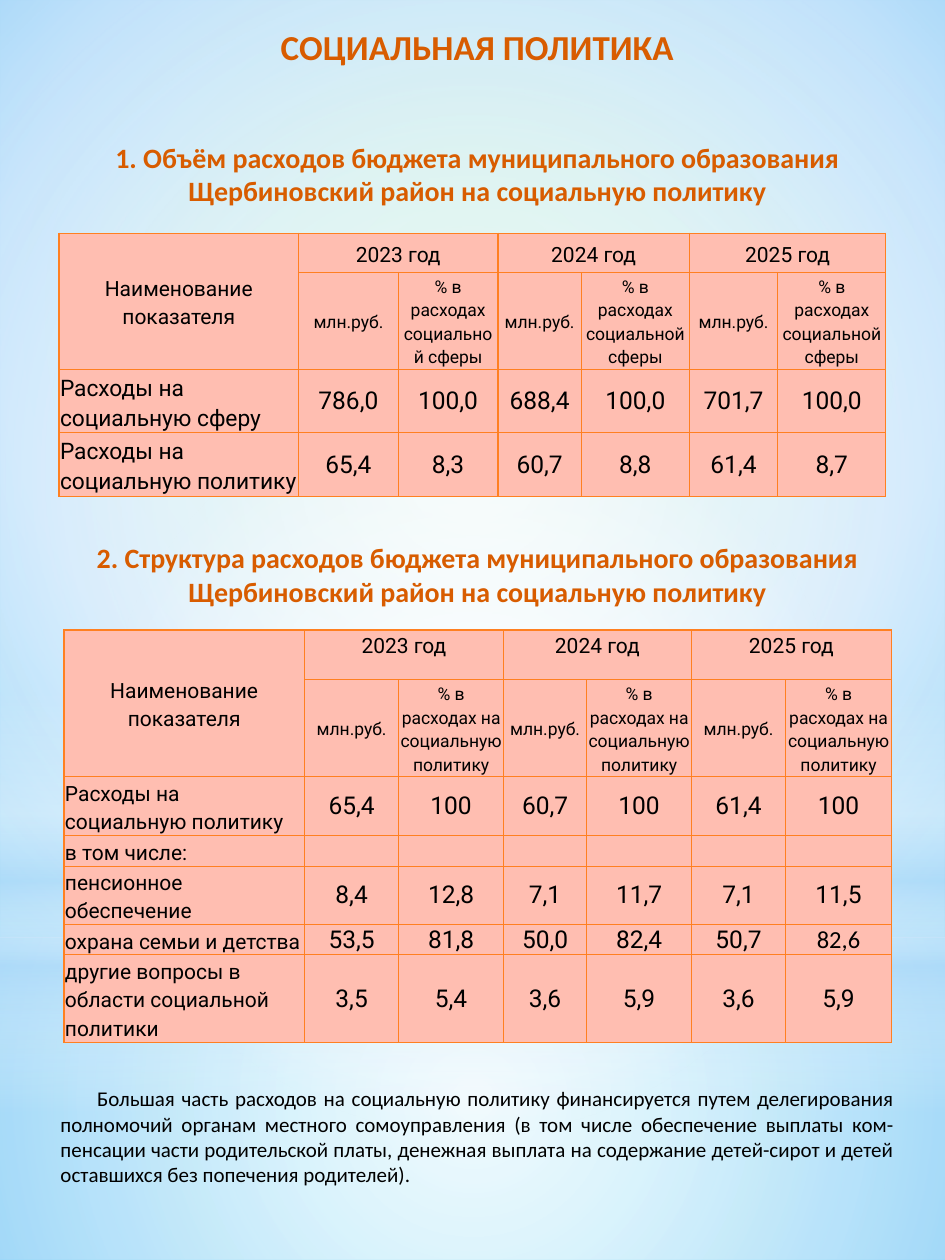
from lxml.etree import SubElement as Sub, Element
from pptx import Presentation
from pptx.dml.color import RGBColor
from pptx.enum.shapes import MSO_SHAPE as Kind
from pptx.enum.text import MSO_ANCHOR as Anchor, MSO_AUTO_SIZE as Auto, PP_ALIGN as Align
from pptx.oxml.ns import qn
from pptx.util import Cm, Pt

ORANGE, BLACK, EDGE, PINK = "D85C00", "000000", "FF8021", "FFBEB1"
MID = (50, 50, 50, 50)
YEARS = ("2023 год", "2024 год", "2025 год")
HEAD = dict(name="Calibri", size=Pt(16), bold=True)


def color(text):
    return RGBColor.from_string(text)


def put(item, fmt):
    for key, value in fmt.items():
        setattr(item, key, value)


def wash(prop, stops, focus=None):
    grad = Element(qn("a:gradFill"), rotWithShape="1")
    group = Sub(grad, qn("a:gsLst"))
    for place, tint, alpha in stops:
        stop = Sub(group, qn("a:gs"), pos=str(place * 1000))
        paint = Sub(stop, qn("a:srgbClr"), val=tint)
        if alpha < 100:
            Sub(paint, qn("a:alpha"), val=str(alpha * 1000))
    if focus:
        radial = Sub(grad, qn("a:path"), path="circle")
        sides = {s: str(v * 1000) for s, v in zip("ltrb", focus)}
        Sub(radial, qn("a:fillToRect"), **sides)
    else:
        Sub(grad, qn("a:lin"), ang="5400000", scaled="0")
    old = prop.find(qn("a:solidFill"))
    prop.replace(old, grad)


def glow(slide, kind, top, height, stops, focus=None):
    shape = slide.shapes.add_shape(kind, 0, Cm(top), Cm(19.05), Cm(height))
    shape.shadow.inherit = False
    shape.line.fill.background()
    shape.fill.solid()
    wash(shape._element.spPr, stops, focus)


def write(para, text, font, tint):
    run = para.add_run()
    run.text = text
    put(run.font, font)
    run.font.color.rgb = color(tint)


def note(slide, top, height, lines, align=Align.CENTER, tint=ORANGE, indent=0):
    box = slide.shapes.add_textbox(Cm(1.19), Cm(top), Cm(16.84), Cm(height))
    frame = box.text_frame
    put(frame, dict(word_wrap=True, auto_size=Auto.SHAPE_TO_FIT_TEXT, margin_left=0,
                    margin_right=0, margin_top=0, margin_bottom=0))
    for spot, (text, font, space) in enumerate(lines):
        para = frame.add_paragraph() if spot else frame.paragraphs[0]
        put(para, dict(alignment=align, space_before=Pt(space)))
        props = para._p.get_or_add_pPr()
        props.set("marL", str(Cm(0.03)))
        props.set("indent", str(Cm(indent)))
        write(para, text, font, tint)


def style(cell):
    put(cell, dict(margin_left=Cm(0.02), margin_right=Cm(0.02), margin_top=Cm(0.01),
                   margin_bottom=0, vertical_anchor=Anchor.MIDDLE))
    props = cell._tc.get_or_add_tcPr()
    for side in "LRTB":
        line = Sub(props, qn("a:ln" + side), w=str(Pt(0.75)))
        Sub(Sub(line, qn("a:solidFill")), qn("a:srgbClr"), val=EDGE)
    cell.fill.solid()
    cell.fill.fore_color.rgb = color(PINK)


def fill(cell, text, size, align=Align.CENTER, space=1.15):
    para = cell.text_frame.paragraphs[0]
    put(para, dict(alignment=align, line_spacing=space))
    if text:
        write(para, text, dict(name="Roboto", size=Pt(size)), BLACK)
    else:
        Sub(para._p, qn("a:endParaRPr"), sz="1000")


def grid(slide, left, top, wide, high, share, rows, size):
    frame = slide.shapes.add_table(len(high), len(wide), Cm(left), Cm(top),
                                   Cm(sum(wide)), Cm(sum(high)))
    table = frame.table
    put(table, dict(first_row=False, horz_banding=False))
    for col, width in zip(table.columns, wide):
        col.width = Cm(width)
    for row, height in zip(table.rows, high):
        row.height = Cm(height)
    for cell in table.iter_cells():
        style(cell)
    table.cell(0, 0).merge(table.cell(1, 0))
    fill(table.cell(0, 0), "Наименование показателя", 12)
    for col, year in zip((1, 3, 5), YEARS):
        table.cell(0, col).merge(table.cell(0, col + 1))
        fill(table.cell(0, col), year, 12)
        fill(table.cell(1, col), "млн.руб.", 10)
        fill(table.cell(1, col + 1), share, 10)
    for row, (label, *values) in enumerate(rows, 2):
        fill(table.cell(row, 0), label, size, Align.LEFT)
        for col, value in enumerate(values or [""] * 6, 1):
            fill(table.cell(row, col), value, 14, space=1.0)
    return table


def scene(slide):
    slide.background.fill.solid()
    wash(slide._element.cSld.bg.bgPr,
         [(0, "9EE2CF", 100), (60, "B4DCFA", 100), (100, "5ECCF3", 100)], (20, 10, 20, 60))
    glow(slide, Kind.RECTANGLE, 18.9, 6.5,
         [(0, "FFFFFF", 91), (37, "FFFFFF", 76), (100, "B4DCFA", 79)], MID)
    glow(slide, Kind.RECTANGLE, 0, 18.9,
         [(0, "FFFFFF", 89), (48, "FFFFFF", 62), (100, "B4DCFA", 79)], MID)
    glow(slide, Kind.RECTANGLE, 13.94, 8.46,
         [(0, "FFFFFF", 0), (29, "FFFFFF", 30), (45, "B4DCFA", 40),
          (55, "FFFFFF", 26), (65, "B4DCFA", 60), (100, "FFFFFF", 0)])
    glow(slide, Kind.OVAL, 5.92, 18.9, [(0, "FFFFFF", 100), (56, "FFFFFF", 0)], MID)


def main():
    deck = Presentation()
    put(deck, dict(slide_width=Cm(19.05), slide_height=Cm(25.4)))
    slide = deck.slides.add_slide(deck.slide_layouts[6])
    scene(slide)
    note(slide, 0.51, 3.68, [
        ("СОЦИАЛЬНАЯ ПОЛИТИКА", {**HEAD, "size": Pt(20)}, 0),
        ("1. Объём расходов бюджета муниципального образования", HEAD, 41.7),
        ("Щербиновский район на социальную политику", HEAD, 0)])
    note(slide, 10.9, 1.37, [
        ("2. Структура расходов бюджета муниципального образования "
         "Щербиновский район на социальную политику", HEAD, 0)])
    note(slide, 21.89, 2.01, [
        ("Большая часть расходов на социальную политику финансируется путем "
         "делегирования полномочий органам местного сомоуправления (в том числе "
         "обеспечение выплаты ком- пенсации части родительской платы, денежная "
         "выплата на содержание детей-сирот и детей оставшихся без попечения "
         "родителей).", dict(name="Calibri", size=Pt(12)), 0)],
        Align.JUSTIFY, BLACK, 0.74)
    grid(slide, 1.19, 4.7, (4.83, 2.01, 2.01, 1.68, 2.18, 1.78, 2.18),
         (0.79, 1.5, 0.81, 0.81), "% в расходах социальной сферы", [
        ("Расходы на социальную сферу", "786,0", "100,0", "688,4", "100,0", "701,7", "100,0"),
        ("Расходы на социальную политику", "65,4", "8,3", "60,7", "8,8", "61,4", "8,7")], 13)
    parts = grid(slide, 1.29, 12.7, (4.85, 1.9, 2.11, 1.68, 2.11, 1.9, 2.13),
                 (1, 1.47, 1.19, 0.61, 0.81, 0.61, 1.45),
                 "% в расходах на социальную политику", [
        ("Расходы на социальную политику", "65,4", "100", "60,7", "100", "61,4", "100"),
        ("в том числе:",),
        ("пенсионное обеспечение", "8,4", "12,8", "7,1", "11,7", "7,1", "11,5"),
        ("охрана семьи и детства", "53,5", "81,8", "50,0", "82,4", "50,7", "82,6"),
        ("другие вопросы в области социальной политики",
         "3,5", "5,4", "3,6", "5,9", "3,6", "5,9")], 12)
    for col in (1, 3, 5):
        parts.cell(0, col).vertical_anchor = Anchor.TOP
    parts.cell(5, 6).text_frame.paragraphs[0].runs[0].font.name = "Calibri"
    deck.save("out.pptx")


if __name__ == "__main__":
    main()
